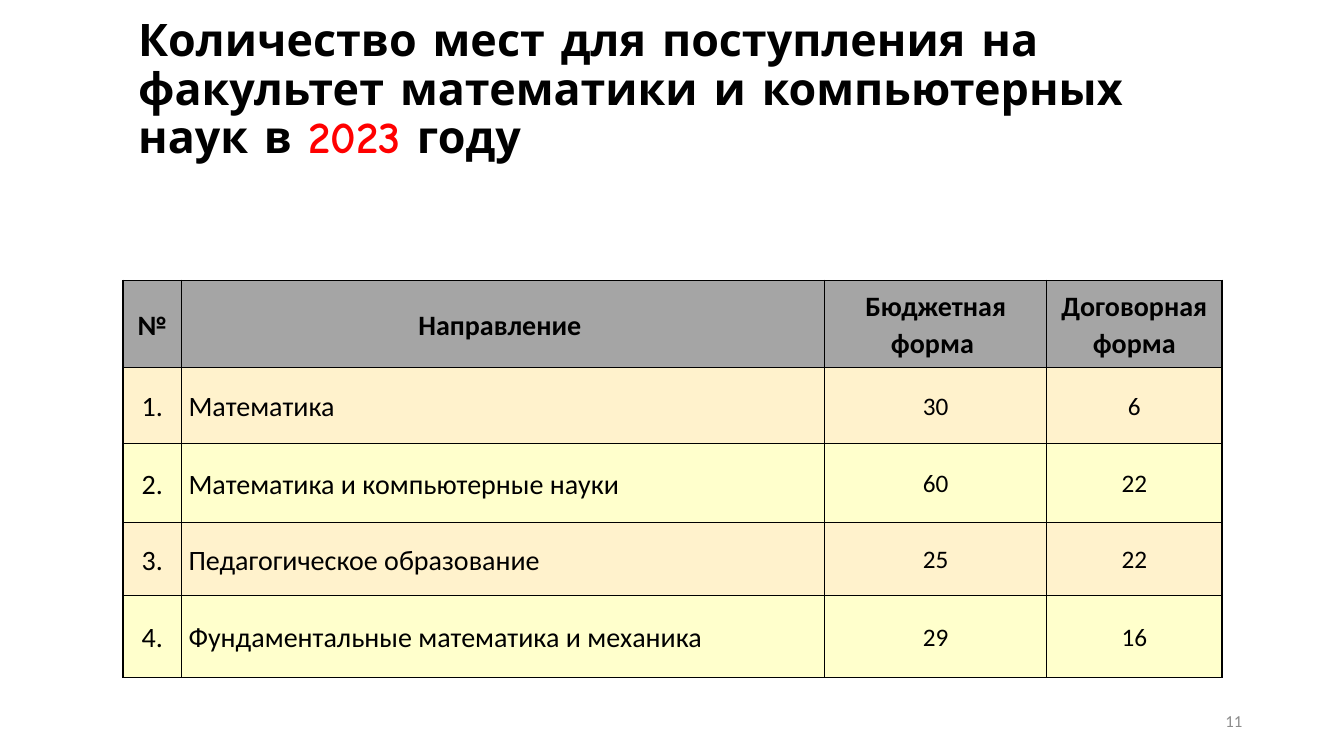
from lxml.etree import SubElement
from pptx import Presentation
from pptx.dml.color import RGBColor
from pptx.enum.text import MSO_ANCHOR, MSO_AUTO_SIZE, PP_ALIGN
from pptx.oxml.ns import qn
from pptx.util import Inches, Pt

BLACK = RGBColor(0x00, 0x00, 0x00)
RED = RGBColor(0xFF, 0x00, 0x00)
GREY = RGBColor(0x8C, 0x8C, 0x8C)
HEAD = RGBColor(0xA5, 0xA5, 0xA5)
BANDS = [RGBColor(0xFF, 0xFF, 0xCC), RGBColor(0xFF, 0xF2, 0xCC)]

TITLE = [
    ("Количество мест для поступления на факультет математики и компьютерных наук в ", BLACK),
    ("2023", RED),
    (" году", BLACK),
]
ROWS = [
    ("№", "Направление ", "Бюджетная форма ", "Договорная форма"),
    ("1.", "Математика", "30", "6"),
    ("2.", "Математика и компьютерные науки", "60", "22"),
    ("3.", "Педагогическое образование", "25", "22"),
    ("4.", "Фундаментальные математика и механика", "29", "16"),
]
WIDTHS = [0.58, 6.38, 2.2, 1.74]
HEIGHTS = [0.87, 0.75, 0.78, 0.73, 0.81]
PAGE = "11"


def set_font(font, name, size, color=None, bold=False):
    """Apply face, size, weight and, if given, colour."""
    font.name, font.size, font.bold = name, Pt(size), bold
    if color is not None:
        font.color.rgb = color


def add_title(slide):
    """Fill and place the title placeholder."""
    title = slide.shapes.title
    title.left, title.top = Inches(1.27), Inches(0.13)
    title.width, title.height = Inches(11.21), Inches(1.54)
    frame = title.text_frame
    frame.word_wrap = True
    frame.auto_size = MSO_AUTO_SIZE.NONE
    frame.vertical_anchor = MSO_ANCHOR.MIDDLE
    para = frame.paragraphs[0]
    para.alignment, para.line_spacing = PP_ALIGN.LEFT, 0.9
    set_font(para.font, "Comic Neue", 32, bold=True)
    for text, color in TITLE:
        run = para.add_run()
        run.text = text
        run.font.color.rgb = color


def add_border(cell):
    """Draw a thin black line on all four sides of a cell."""
    props = cell._tc.get_or_add_tcPr()
    for side in ("a:lnL", "a:lnR", "a:lnT", "a:lnB"):
        line = SubElement(props, qn(side), w=str(Pt(1)))
        fill = SubElement(line, qn("a:solidFill"))
        SubElement(fill, qn("a:srgbClr"), val=str(BLACK))


def fill_cell(cell, text, row, col):
    """Write and format one cell by its row and column."""
    wide = col < 2
    cell.margin_left = cell.margin_right = Inches(0.07 if wide else 0)
    cell.margin_top, cell.margin_bottom = Inches(0.01 if wide else 0), 0
    cell.vertical_anchor = MSO_ANCHOR.MIDDLE
    add_border(cell)
    cell.fill.solid()
    cell.fill.fore_color.rgb = BANDS[row % 2] if row else HEAD
    cell.text = text
    para = cell.text_frame.paragraphs[0]
    para.alignment = PP_ALIGN.LEFT if row and col == 1 else PP_ALIGN.CENTER
    para.line_spacing, para.space_after = 1.07, Pt(8)
    size = 20 if wide or row == 0 else 18
    set_font(para.font, "Calibri", size, BLACK, row == 0)


def add_places(slide):
    """Build the table of places."""
    frame = slide.shapes.add_table(
        len(ROWS), len(WIDTHS), Inches(1.22), Inches(2.78),
        Inches(sum(WIDTHS)), Inches(sum(HEIGHTS)))
    table = frame.table
    table.first_row = table.horz_banding = False
    for column, width in zip(table.columns, WIDTHS):
        column.width = Inches(width)
    for line, height in zip(table.rows, HEIGHTS):
        line.height = Inches(height)
    for row, texts in enumerate(ROWS):
        for col, text in enumerate(texts):
            fill_cell(table.cell(row, col), text, row, col)


def add_page(slide):
    """Put the page number at the lower right."""
    box = slide.shapes.add_textbox(Inches(9.42), Inches(6.95), Inches(3), Inches(0.4))
    frame = box.text_frame
    frame.word_wrap = True
    frame.vertical_anchor = MSO_ANCHOR.MIDDLE
    para = frame.paragraphs[0]
    para.text, para.alignment = PAGE, PP_ALIGN.RIGHT
    set_font(para.font, "Calibri", 12, GREY)


def main():
    """Build and save the slide."""
    deck = Presentation()
    deck.slide_width, deck.slide_height = Inches(13.33), Inches(7.5)
    slide = deck.slides.add_slide(deck.slide_layouts[5])
    add_page(slide)
    add_title(slide)
    add_places(slide)
    deck.save("out.pptx")


if __name__ == "__main__":
    main()
